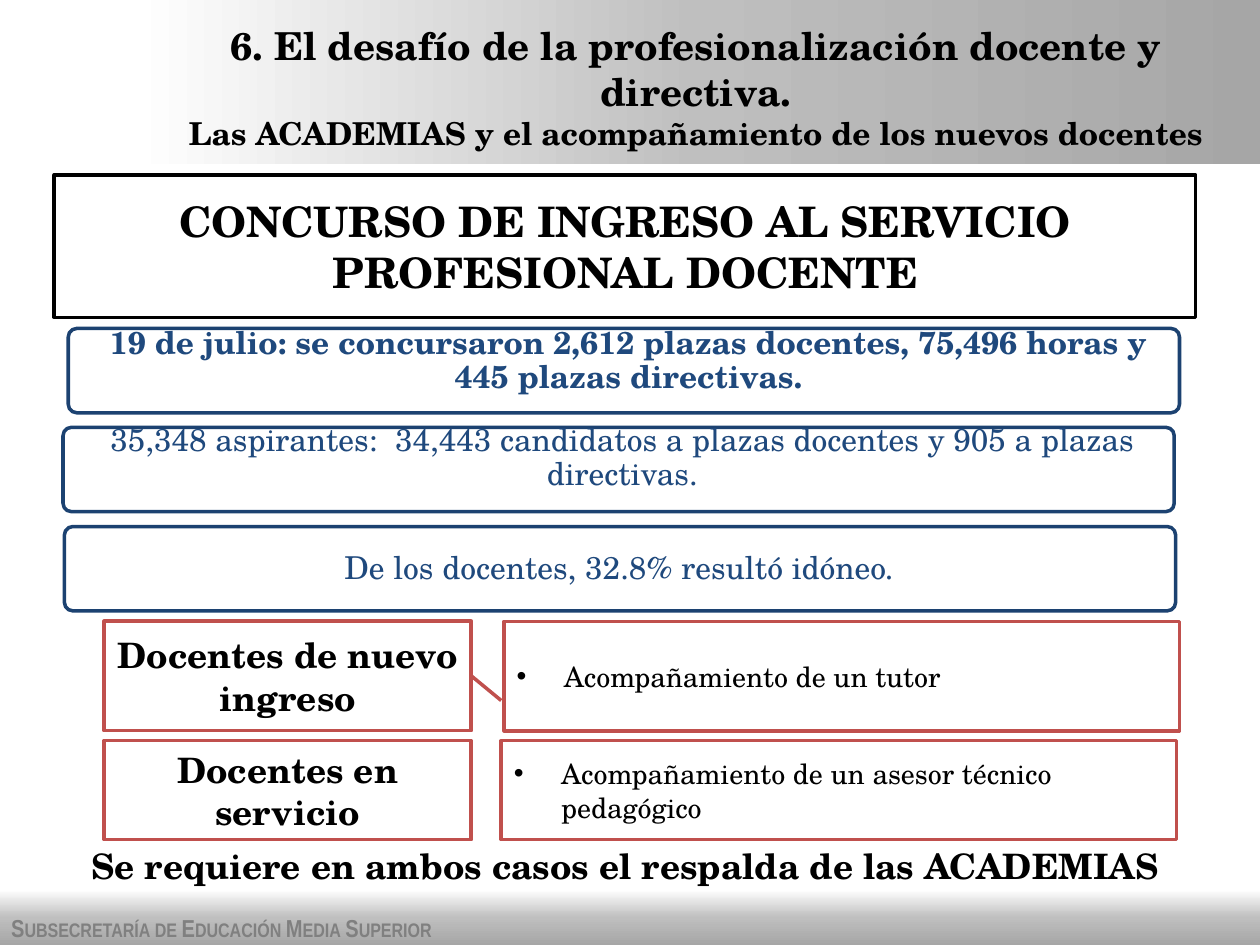
from copy import deepcopy
from dataclasses import dataclass

from lxml import etree
from pptx import Presentation
from pptx.dml.color import RGBColor
from pptx.enum.shapes import MSO_CONNECTOR, MSO_SHAPE
from pptx.enum.text import MSO_ANCHOR, MSO_AUTO_SIZE, PP_ALIGN
from pptx.oxml.ns import qn
from pptx.util import Pt

RECT, ROUNDED = MSO_SHAPE.RECTANGLE, MSO_SHAPE.ROUNDED_RECTANGLE
STRAIGHT = MSO_CONNECTOR.STRAIGHT
TOP, MIDDLE = MSO_ANCHOR.TOP, MSO_ANCHOR.MIDDLE
LEFT, CENTER = PP_ALIGN.LEFT, PP_ALIGN.CENTER
NO_AUTOFIT = MSO_AUTO_SIZE.NONE
TWO_CONTENT = 3


@dataclass(frozen=True)
class Theme:
    serif: str = "TeX Gyre Schola"
    narrow: str = "Arial Narrow"
    black: str = "000000"
    white: str = "FFFFFF"
    grey: str = "808080"
    blue_text: str = "1F497D"
    blue_line: str = "1C4271"
    red: str = "C0504D"
    band: tuple = ((0, "FFFFFF"), (0.5, "BFBFBF"), (1, "A6A6A6"))
    banner: int = 24
    title: int = 22
    label: int = 20
    text: int = 18
    item: int = 16
    footer: int = 14
    outline: int = 2


THEME = Theme()


def rgb(value):
    return RGBColor.from_string(value)


def place(shape, box):
    shape.left, shape.top, shape.width, shape.height = map(Pt, box)


def style_box(shape, line, fill=THEME.white):
    if fill:
        shape.fill.solid()
        shape.fill.fore_color.rgb = rgb(fill)
    else:
        shape.fill.background()
    shape.line.color.rgb = rgb(line)
    shape.line.width = Pt(THEME.outline)


def write(shape, lines, size, color=THEME.black, bold=True, align=CENTER,
          anchor=MIDDLE, font=THEME.serif):
    frame = shape.text_frame
    frame.word_wrap = True
    frame.auto_size = NO_AUTOFIT
    frame.vertical_anchor = anchor
    frame.text = "\n".join(lines)
    for paragraph in frame.paragraphs:
        paragraph.alignment = align
        paragraph.space_before = Pt(0)
        paragraph.font.name = font
        paragraph.font.size = Pt(size)
        paragraph.font.bold = bold
        paragraph.font.color.rgb = rgb(color)
    return frame


def add_band(slide, box, angle):
    band = slide.shapes.add_shape(RECT, *map(Pt, box))
    band.shadow.inherit = False
    band.line.fill.background()
    band.fill.gradient()
    band.fill.gradient_angle = angle
    stop_list = band.element.spPr.find(".//" + qn("a:gsLst"))
    stop_list.append(deepcopy(stop_list[0]))
    for stop, (position, color) in zip(band.fill.gradient_stops, THEME.band):
        stop.position = position
        stop.color.rgb = rgb(color)


def add_text(slide, box, lines, size, **style):
    return write(slide.shapes.add_textbox(*map(Pt, box)), lines, size, **style)


def add_box(slide, box, lines, size, line, fill=THEME.white):
    panel = slide.shapes.add_shape(RECT, *map(Pt, box))
    panel.shadow.inherit = False
    style_box(panel, line, fill)
    write(panel, lines, size)


def add_fact(slide, panel_at, text_at, text, bold):
    """Rounded panel grouped with its separately placed text."""
    group = slide.shapes.add_group_shape()
    panel = group.shapes.add_shape(ROUNDED, *map(Pt, (*panel_at, 635, 48.2)))
    panel.adjustments[0] = 0.1
    panel.shadow.inherit = False
    style_box(panel, THEME.blue_line)
    caption = group.shapes.add_textbox(*map(Pt, (*text_at, 632, 45.4)))
    frame = write(caption, [text], THEME.text, THEME.blue_text, bold)
    frame.margin_left = frame.margin_right = Pt(2.9)
    frame.margin_top = frame.margin_bottom = Pt(2.2)
    frame.paragraphs[0].line_spacing = 0.9
    return frame.paragraphs[0]


def fill_list(placeholder, box, item):
    place(placeholder, box)
    style_box(placeholder, THEME.red)
    frame = write(placeholder, [item], THEME.item, bold=False, align=LEFT)
    properties = frame.paragraphs[0]._p.get_or_add_pPr()
    properties.set("marL", str(Pt(27)))
    properties.set("indent", str(-Pt(27)))


def add_link(slide, start, end):
    link = slide.shapes.add_connector(STRAIGHT, *map(Pt, (*start, *end)))
    link.line.color.rgb = rgb(THEME.red)
    link.line.width = Pt(THEME.outline)
    etree.SubElement(link.element.spPr, qn("a:effectLst"))


def main():
    deck = Presentation()
    deck.slide_width, deck.slide_height = Pt(720), Pt(540)
    slide = deck.slides.add_slide(deck.slide_layouts[TWO_CONTENT])
    title, tutor_list, adviser_list = slide.placeholders

    # Footer and header bands
    add_band(slide, (0, 508.5, 720, 31.5), 270)
    footer = add_text(slide, (-0.7, 518.4, 465, 24.5),
                      ["Subsecretaría de Educación Media Superior"],
                      THEME.footer, color=THEME.grey, align=LEFT, anchor=TOP,
                      font=THEME.narrow)
    for run in footer.paragraphs[0].runs:
        run.font._element.set("cap", "small")
    add_band(slide, (76.5, 0, 643.5, 93.6), 0)

    # Title, raised above the header band
    place(title, (67.7, 1.4, 660, 96.5))
    heading = write(title, [
        "6. El desafío de la profesionalización docente y directiva.",
        "Las ACADEMIAS y el acompañamiento de los nuevos docentes",
    ], THEME.title)
    heading.paragraphs[1].font.size = Pt(THEME.text)
    slide.shapes.element.append(title.element)

    # Banner
    add_box(slide, (31, 100, 652.3, 81.4),
            ["CONCURSO DE INGRESO AL SERVICIO PROFESIONAL DOCENTE"],
            THEME.banner, THEME.black, fill=None)

    # Contest figures
    facts = (
        ((39, 187.7), (43.2, 183.6), "19 de julio: se concursaron 2,612 plazas "
         "docentes, 75,496 horas y 445 plazas directivas.", True),
        ((36, 244.2), (39.6, 239), "35,348 aspirantes:  34,443 candidatos a "
         "plazas docentes y 905 a plazas directivas.", False),
        ((36.8, 300.9), (38.2, 302.4),
         "De los docentes, 32.8% resultó idóneo", False),
    )
    for fact in facts:
        last_fact = add_fact(slide, *fact)
    full_stop = last_fact.add_run()
    full_stop.text = "."
    full_stop.font.italic = True

    # Teacher groups and the support each receives
    rows = (
        (355, 62.6, ["Docentes de nuevo", "ingreso"],
         tutor_list, 288, "Acompañamiento de un tutor"),
        (423.2, 56.6, ["Docentes en servicio"],
         adviser_list, 286.4, "Acompañamiento de un asesor técnico pedagógico"),
    )
    for top, height, group_name, support_list, left, support in rows:
        add_box(slide, (59.5, top, 209.8, height), group_name,
                THEME.label, THEME.red)
        fill_list(support_list, (left, top, 386, height), support)
    add_link(slide, (269.3, 386.2), (286.4, 400.3))

    # Closing statement
    add_text(slide, (8.6, 478.8, 697.7, 34.6),
             ["Se requiere en ambos casos el respalda de las ACADEMIAS"],
             THEME.label, anchor=TOP)

    deck.save("out.pptx")


if __name__ == "__main__":
    main()
